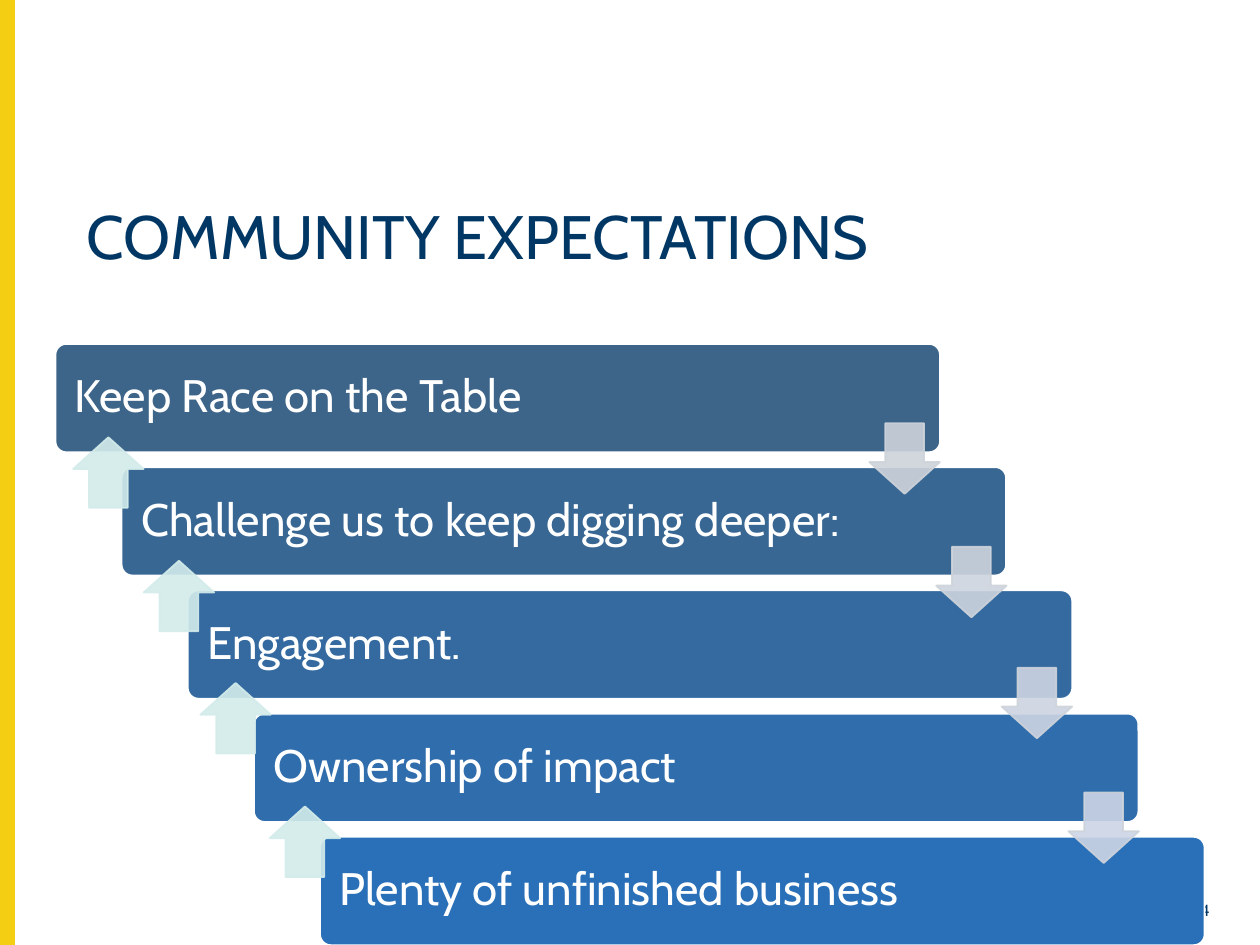
from dataclasses import dataclass

from lxml import etree
from pptx import Presentation
from pptx import util as u
from pptx.dml.color import RGBColor
from pptx.enum import shapes, text
from pptx.oxml.ns import qn

HUES = {"gold": "F4CE12", "navy": "003764", "white": "FFFFFF",
        "edge": "CED3DA", "mint": "D3ECEB"}
FONT = "Cabin"
KIND = shapes.MSO_SHAPE
LEFT, TOP, STEP, DROP = 0.44, 2.73, 0.525, 0.978


@dataclass
class Bar:
    words: str
    fill: str


@dataclass
class Arrow:
    left: float
    top: float
    fill: str
    edge: str
    turn: int = 0


BARS = [
    Bar("Keep Race on the Table", "3D6489"),
    Bar("Challenge us to keep digging deeper:", "396794"),
    Bar("Engagement.", "346AA0"),
    Bar("Ownership of impact", "2F6DAC"),
    Bar("Plenty of unfinished business", "2A70B8"),
]
DOWN = [
    Arrow(6.9, 3.36, "CED3DA", HUES["edge"]),
    Arrow(7.43, 4.34, "CED4DE", HUES["edge"]),
    Arrow(7.95, 5.3, "CDD4E2", HUES["edge"]),
    Arrow(8.48, 6.29, "CDD5E6", HUES["edge"]),
]
RISE = [Arrow(left, top, HUES["mint"], HUES["mint"], 180)
        for left, top in [(0.58, 3.47), (1.14, 4.45), (1.59, 5.42), (2.14, 6.4)]]


def add_box(slide, kind, left: float, top: float, width: float, height: float,
            fill: str, edge: str):
    """Add a filled and outlined shape without a shadow."""
    box = slide.shapes.add_shape(kind, u.Inches(left), u.Inches(top),
                                 u.Inches(width), u.Inches(height))
    box.shadow.inherit = False
    box.fill.solid()
    box.fill.fore_color.rgb = RGBColor.from_string(fill)
    box.line.color.rgb = RGBColor.from_string(edge)
    box.line.width = u.Pt(1)
    return box


def set_text(frame, words: str, size: float, hue: str, space: float,
             align=text.PP_ALIGN.LEFT) -> None:
    """Write one line of text and format it."""
    frame.word_wrap = True
    frame.text = words
    para = frame.paragraphs[0]
    para.alignment = align
    para.line_spacing = space
    font = para.runs[0].font
    font.name, font.size = FONT, u.Pt(size)
    font.color.rgb = RGBColor.from_string(hue)


def add_label(slide, left: float, top: float, width: float, height: float,
              words: str, size: float, space: float, align=text.PP_ALIGN.LEFT) -> None:
    """Add a navy text box."""
    box = slide.shapes.add_textbox(u.Inches(left), u.Inches(top),
                                   u.Inches(width), u.Inches(height))
    set_text(box.text_frame, words, size, HUES["navy"], space, align)


def add_bar(slide, rank: int, bar: Bar) -> None:
    """Add one step of the staircase with its text."""
    box = add_box(slide, KIND.ROUNDED_RECTANGLE, LEFT + rank * STEP,
                  TOP + rank * DROP, 7.02, 0.86, bar.fill, HUES["white"])
    box.adjustments[0] = 0.1
    frame = box.text_frame
    frame.margin_left = u.Inches(0.13)
    frame.vertical_anchor = text.MSO_ANCHOR.MIDDLE
    set_text(frame, bar.words, 26, HUES["white"], 0.9)


def add_arrow(slide, arrow: Arrow) -> None:
    """Add a slightly transparent block arrow."""
    box = add_box(slide, KIND.DOWN_ARROW, arrow.left, arrow.top, 0.56, 0.56,
                  arrow.fill, arrow.edge)
    box.adjustments[0], box.adjustments[1] = 0.55, 0.45
    box.rotation = arrow.turn
    for hue in box._element.spPr.iter(qn("a:srgbClr")):
        etree.SubElement(hue, qn("a:alpha"), val="90000")


def main() -> None:
    """Build the slide and save it."""
    deck = Presentation()
    deck.slide_width, deck.slide_height = u.Inches(10), u.Inches(7.5)
    slide = deck.slides.add_slide(deck.slide_layouts[6])
    add_box(slide, KIND.RECTANGLE, 0, 0, 0.11, 7.5, HUES["gold"], HUES["gold"])
    add_label(slide, 0.59, 1.59, 9.08, 0.86, "COMMUNITY EXPECTATIONS", 35, 0.9)
    add_label(slide, 9.2, 7.14, 0.5, 0.21, "4", 9.2, 0.7, text.PP_ALIGN.RIGHT)
    for rank, bar in enumerate(BARS):
        add_bar(slide, rank, bar)
    for arrow in DOWN + RISE:
        add_arrow(slide, arrow)
    deck.save("out.pptx")


if __name__ == "__main__":
    main()
